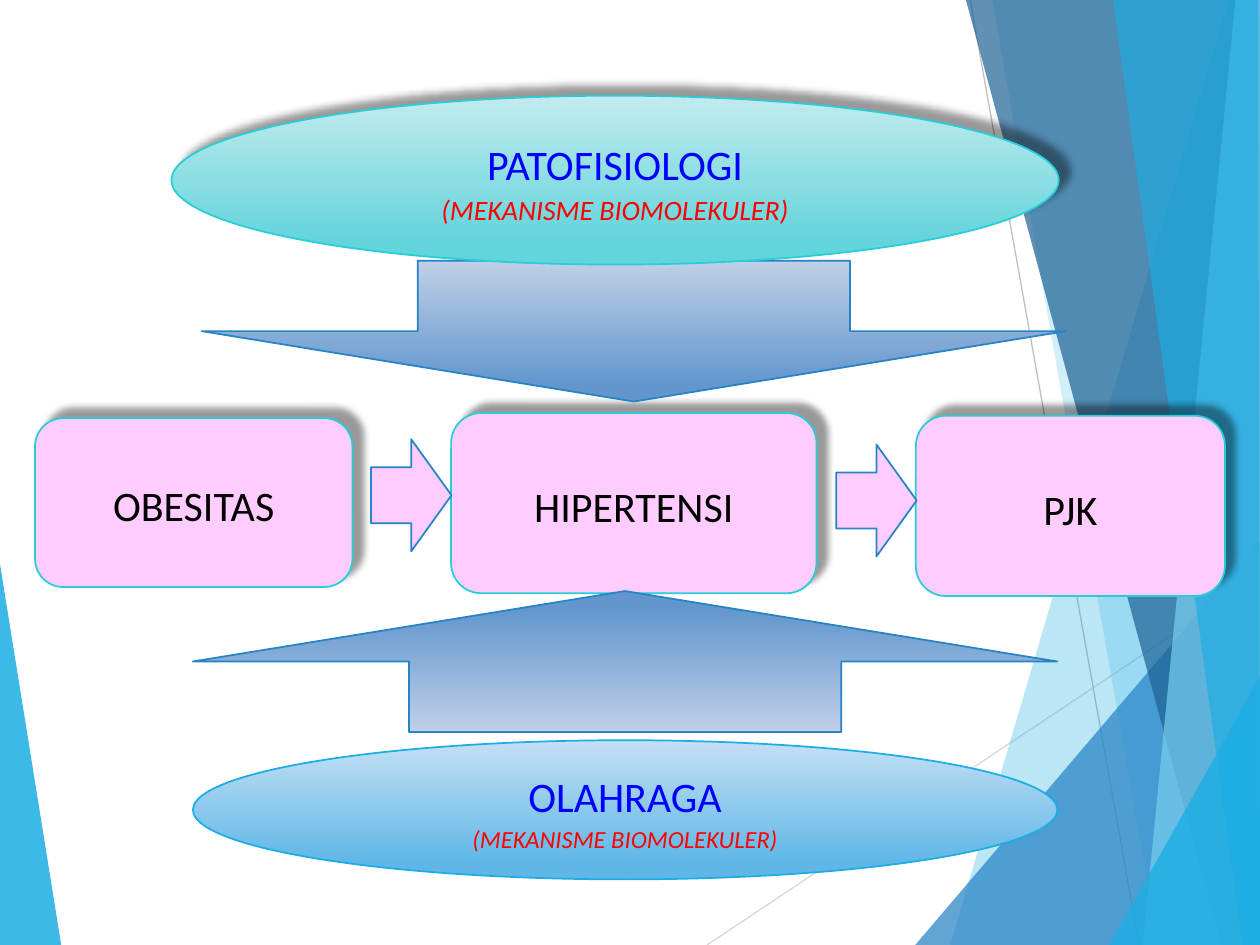
"""Build the slide linking obesity, hypertension and PJK to their mechanisms."""
from lxml import etree
from pptx import Presentation
from pptx.dml.color import RGBColor
from pptx.enum.shapes import MSO_CONNECTOR, MSO_SHAPE
from pptx.enum.text import MSO_ANCHOR, PP_ALIGN
from pptx.oxml import parse_xml
from pptx.oxml.ns import qn
from pptx.util import Pt

STRAIGHT = MSO_CONNECTOR.STRAIGHT
ELLIPSE = MSO_SHAPE.OVAL
ROUNDED = MSO_SHAPE.ROUNDED_RECTANGLE
DOWN_ARROW = MSO_SHAPE.DOWN_ARROW
MIDDLE = MSO_ANCHOR.MIDDLE
CENTER = PP_ALIGN.CENTER

SKY = RGBColor(0x1C, 0xAD, 0xE4)
BLUE = RGBColor(0x26, 0x83, 0xC6)
NAVY = RGBColor(0x1D, 0x62, 0x94)
PALE_SKY = RGBColor(0x77, 0xCE, 0xEF)
TURQUOISE = RGBColor(0x27, 0xCE, 0xD7)
PINK = RGBColor(0xFF, 0xCC, 0xFF)
BLACK = RGBColor(0, 0, 0)
TITLE_BLUE = RGBColor(0, 0, 0xFF)
RED = RGBColor(0xFF, 0, 0)
LIGHT_GREY = RGBColor(0xD9, 0xD9, 0xD9)
GREY = RGBColor(0xBF, 0xBF, 0xBF)
ARROW_FADE = (RGBColor(0xBF, 0xD0, 0xE7), RGBColor(0x62, 0x96, 0xCD))
SKY_FADE = (RGBColor(0xC4, 0xE0, 0xF4), RGBColor(0x60, 0xB7, 0xE7))
TURQUOISE_FADE = (RGBColor(0xC2, 0xEB, 0xEE), RGBColor(0x62, 0xD4, 0xDB))

SHADOW = (
    '<a:effectLst xmlns:a="http://schemas.openxmlformats.org/drawingml/2006/main">'
    '<a:outerShdw blurRad="50800" dist="101600" dir="18900000" algn="bl" rotWithShape="0">'
    '<a:srgbClr val="000000"><a:alpha val="40000"/></a:srgbClr>'
    '</a:outerShdw></a:effectLst>'
)

deck = Presentation()
deck.slide_width, deck.slide_height = Pt(720), Pt(540)
page = deck.slides.add_slide(deck.slide_layouts[6])


def add_box(kind, place, fill, line, shadow=False):
    """Add a preset shape with a plain colour or a two-colour fade."""
    box = page.shapes.add_shape(kind, *[Pt(value) for value in place])
    box.shadow.inherit = False
    if isinstance(fill, RGBColor):
        box.fill.solid()
        box.fill.fore_color.rgb = fill
    else:
        box.fill.gradient()
        box.fill.gradient_angle = 270
        for stop, color, position in zip(box.fill.gradient_stops, fill, (0, 0.88)):
            stop.color.rgb = color
            stop.position = position
    box.line.color.rgb = line
    box.line.width = Pt(1)
    if shadow:
        properties = box._element.spPr
        properties.replace(properties.find(qn("a:effectLst")), parse_xml(SHADOW))
    return box


def write(box, text, size=24, color=BLACK, italic=False):
    """Write text as the next centred paragraph of a box."""
    frame = box.text_frame
    frame.word_wrap = True
    frame.vertical_anchor = MIDDLE
    para = frame.add_paragraph() if frame.text else frame.paragraphs[0]
    para.alignment = CENTER
    para.line_spacing = 1.1
    span = para.add_run()
    span.text = text
    span.font.name = "Calibri"
    span.font.size = Pt(size)
    span.font.italic = italic
    span.font.color.rgb = color


LEFT_FACET = (SKY, 85, [(-0.7, 316), (35.3, 540.5), (-0.7, 540)])
RIGHT_FACETS = [
    (SKY, 30, [(702, 0), (543, 540), (721, 540.5), (720.7, 0)]),
    (SKY, 20, [(567.4, 0), (661.7, 540), (720.7, 540), (720.7, 0)]),
    (BLUE, 72, [(522.7, 540), (720, 309), (720.7, 540)]),
    (NAVY, 70, [(552.2, 0), (698.4, 540), (720.7, 540), (720.7, 0)]),
    (PALE_SKY, 70, [(706.3, 0), (653, 540), (720.7, 540), (720, 0)]),
    (SKY, 65, [(635.8, 0), (710, 540), (720, 540), (718.6, 0)]),
    (SKY, 80, [(634.3, 540), (720.7, 385), (720.7, 540)]),
]
RAYS = [(404, 540, 720.7, 329, LIGHT_GREY), (554.4, 0, 651, 540, GREY)]

for color, opacity, points in [LEFT_FACET] + RIGHT_FACETS:
    builder = page.shapes.build_freeform(*points[0], scale=float(Pt(1)))
    builder.add_line_segments(points[1:], close=True)
    facet = builder.convert_to_shape()
    facet.shadow.inherit = False
    facet.fill.solid()
    facet.fill.fore_color.rgb = color
    facet.line.fill.background()
    tint = facet._element.spPr.find(qn("a:solidFill"))[0]
    etree.SubElement(tint, qn("a:alpha")).set("val", str(opacity * 1000))
    if points is LEFT_FACET[2]:
        for x1, y1, x2, y2, grey in RAYS:
            ray = page.shapes.add_connector(STRAIGHT, Pt(x1), Pt(y1), Pt(x2), Pt(y2))
            ray.line.color.rgb = grey
            ray.line.width = Pt(0.75)
            etree.SubElement(ray._element.spPr, qn("a:effectLst"))

for name, place in [
    ("HIPERTENSI", (257.8, 236, 208.8, 103)),
    ("OBESITAS", (20, 239, 181.4, 96.5)),
    ("PJK", (523.4, 237.6, 176.6, 103)),
]:
    write(add_box(ROUNDED, place, PINK, TURQUOISE, shadow=True), name)

add_box(DOWN_ARROW, (115.2, 149, 494, 80.5), ARROW_FADE, BLUE)
up_arrow = add_box(DOWN_ARROW, (110.2, 337.8, 494, 80.5), ARROW_FADE, BLUE)
up_arrow._element.spPr.find(qn("a:xfrm")).set("flipV", "1")

for left, top in [(203, 260), (468.8, 263)]:
    add_box(DOWN_ARROW, (left, top, 64, 46), PINK, BLUE).rotation = 270

for name, size, place, fade, line, shadow in [
    ("OLAHRAGA", 14, (110.2, 423, 494, 79.5), SKY_FADE, SKY, False),
    ("PATOFISIOLOGI", 16, (98, 54.7, 507, 96.5), TURQUOISE_FADE, TURQUOISE, True),
]:
    ellipse = add_box(ELLIPSE, place, fade, line, shadow)
    write(ellipse, name, color=TITLE_BLUE)
    write(ellipse, "(MEKANISME BIOMOLEKULER)", size=size, color=RED, italic=True)

deck.save("out.pptx")
